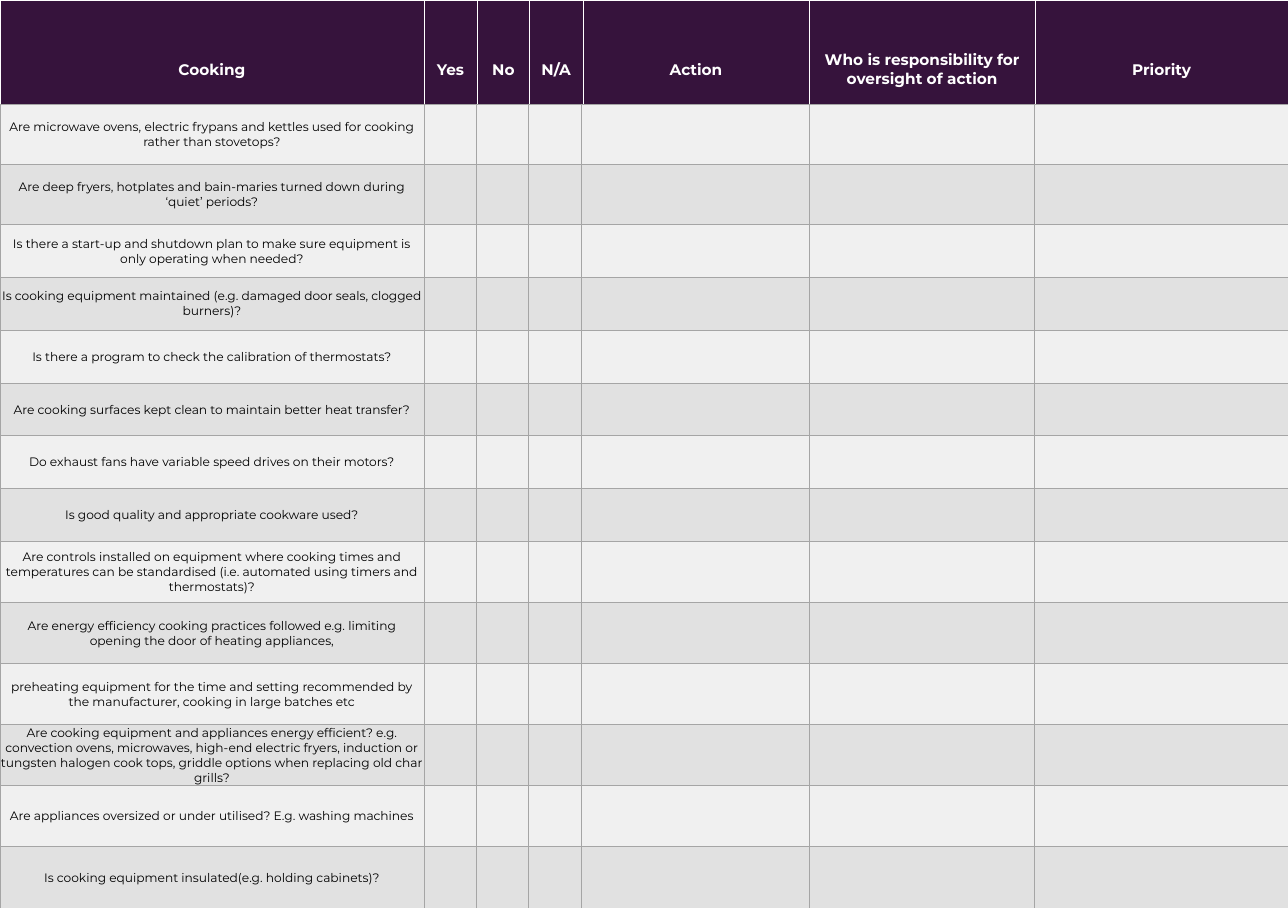
from lxml import etree
from pptx import Presentation
from pptx.dml.color import RGBColor
from pptx.enum.text import MSO_ANCHOR as Anchor, PP_ALIGN as Align
from pptx.oxml.ns import qn
from pptx.util import Inches, Pt

SLIDE_W, SLIDE_H = 23.4, 16.5
BODY_TOP = 1.89
FONT = "Montserrat"
PURPLE, WHITE, BLACK = "36133C", "FFFFFF", "000000"
BANDS = ["F0F0F0", "E1E1E1"]
GREY = "A5A5A5"

HEADINGS = ["Cooking", "Yes", "No", "N/A", "Action",
            "Who is responsibility for oversight of action", "Priority"]
HEAD_COLS = [7.7, 0.97, 0.95, 0.97, 4.11, 4.11, 4.59]
HEAD_H = 2.53

BODY_COLS = [7.7, 0.95, 0.95, 0.97, 4.14, 4.08, 4.62]
BODY_ROWS = [1.09, 1.1] + [0.96] * 6 + [1.11] * 6
QUESTIONS = [
    "Are microwave ovens, electric frypans and kettles used for cooking "
    "rather than stovetops?",
    "Are deep fryers, hotplates and bain-maries turned down during "
    "‘quiet’ periods?",
    "Is there a start-up and shutdown plan to make sure equipment is "
    "only operating when needed?",
    "Is cooking equipment maintained (e.g. damaged door seals, clogged "
    "burners)?",
    "Is there a program to check the calibration of thermostats?",
    "Are cooking surfaces kept clean to maintain better heat transfer?",
    "Do exhaust fans have variable speed drives on their motors?",
    "Is good quality and appropriate cookware used?",
    "Are controls installed on equipment where cooking times and "
    "temperatures can be standardised (i.e. automated using timers and "
    "thermostats)?",
    "Are energy efficiency cooking practices followed e.g. limiting "
    "opening the door of heating appliances,",
    "preheating equipment for the time and setting recommended by the "
    "manufacturer, cooking in large batches etc",
    "Are cooking equipment and appliances energy efficient? e.g. "
    "convection ovens, microwaves, high-end electric fryers, induction or "
    "tungsten halogen cook tops, griddle options when replacing old char "
    "grills?",
    "Are appliances oversized or under utilised? E.g. washing machines",
    "Is cooking equipment insulated(e.g. holding cabinets)?",
]


def rgb(color):
    return RGBColor.from_string(color)


def set_borders(cell, color, widths):
    """Draw the left, right, top and bottom borders, widths in points."""
    tcPr = cell._tc.get_or_add_tcPr()
    for side, width in zip("LRTB", widths):
        ln = etree.SubElement(tcPr, qn(f"a:ln{side}"), w=str(Pt(width)))
        fill = etree.SubElement(ln, qn("a:solidFill"))
        etree.SubElement(fill, qn("a:srgbClr"), val=color)


def set_fill(cell, color):
    cell.fill.solid()
    cell.fill.fore_color.rgb = rgb(color)


def write(cell, text, color, **font):
    cell.vertical_anchor = Anchor.MIDDLE
    p = cell.text_frame.paragraphs[0]
    p.alignment = Align.CENTER
    r = p.add_run()
    r.text = text
    r.font.color.rgb = rgb(color)
    for name, value in {"name": FONT, **font}.items():
        setattr(r.font, name, value)


def add_grid(s, box, cols, rows):
    """Add an unbanded table with the given column widths and row heights."""
    table = s.shapes.add_table(len(rows), len(cols),
                               *[Inches(v) for v in box]).table
    table.first_row = table.horz_banding = False
    for col, width in zip(table.columns, cols):
        col.width = Inches(width)
    for row, height in zip(table.rows, rows):
        row.height = Inches(height)
    return table


def add_header(s, box):
    table = add_grid(s, box, HEAD_COLS, [box[3]])
    for cell, heading in zip(table.iter_cells(), HEADINGS):
        set_borders(cell, WHITE, (1, 1, 1, 3))
        set_fill(cell, PURPLE)
        write(cell, heading, WHITE, size=Pt(20), bold=True)


def add_checklist(s, box):
    table = add_grid(s, box, BODY_COLS, BODY_ROWS)
    margins = {"margin_left": 0.01, "margin_right": 0.01,
               "margin_top": 0.01, "margin_bottom": 0}
    for i, (row, question) in enumerate(zip(table.rows, QUESTIONS)):
        for cell in row.cells:
            set_borders(cell, GREY, (1, 1, 1, 1))
            set_fill(cell, BANDS[i % 2])
        first = row.cells[0]
        for name, value in margins.items():
            setattr(first, name, Inches(value))
        write(first, question, BLACK, size=Pt(16))


def main():
    prs = Presentation()
    prs.slide_width, prs.slide_height = Inches(SLIDE_W), Inches(SLIDE_H)
    s = prs.slides.add_slide(prs.slide_layouts[6])
    # The checklist overlaps the lower part of the header
    add_header(s, (0, 0, SLIDE_W, HEAD_H))
    add_checklist(s, (0, BODY_TOP, SLIDE_W, SLIDE_H - BODY_TOP))
    prs.save("out.pptx")


if __name__ == "__main__":
    main()
